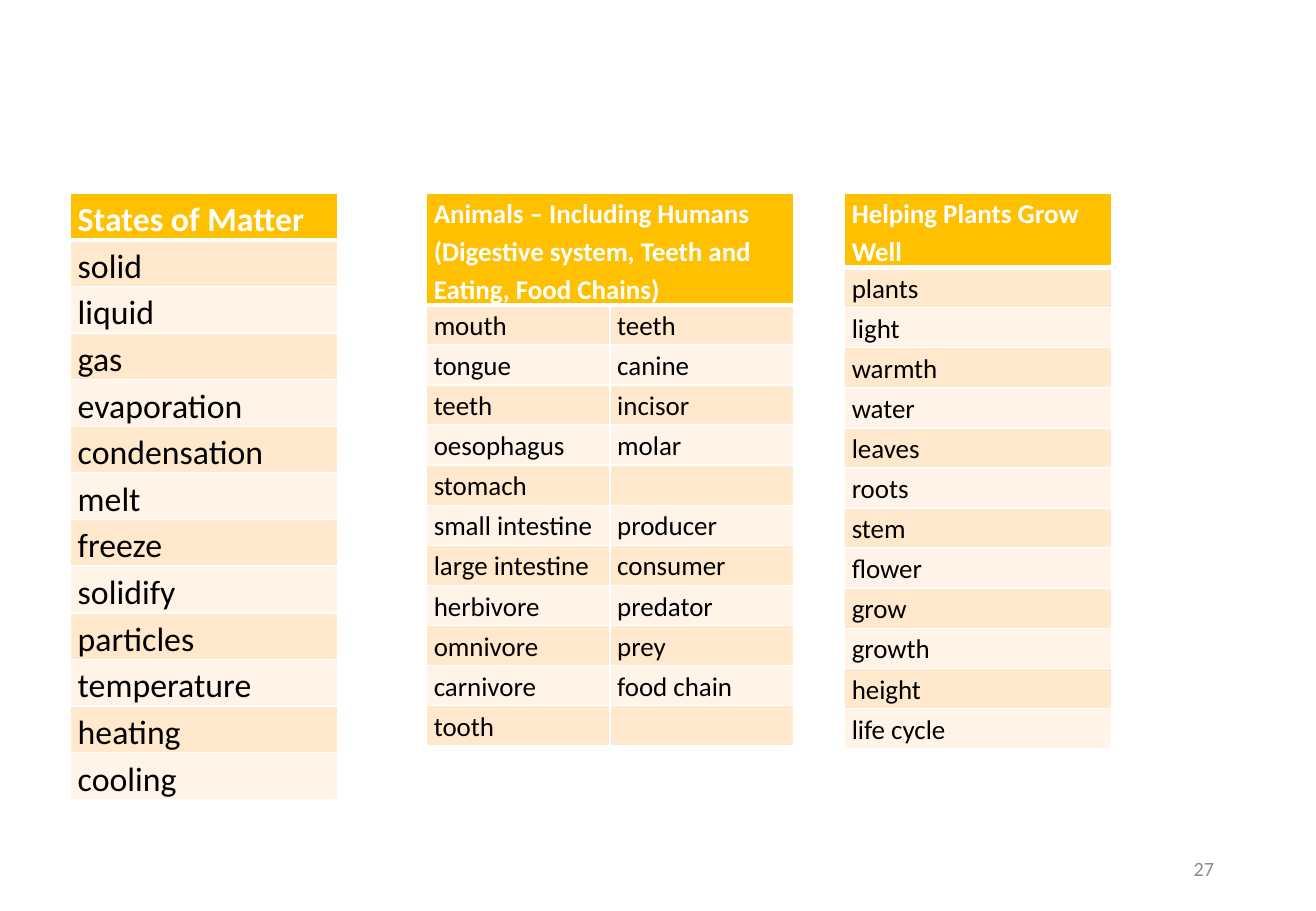
from lxml.etree import SubElement
from pptx import Presentation
from pptx.dml.color import RGBColor
from pptx.enum.text import MSO_ANCHOR, PP_ALIGN
from pptx.oxml.ns import qn
from pptx.util import Inches, Pt

SLIDE_W, SLIDE_H = 10.83, 7.5
TABLE_TOP = 1.59
WHITE, BLACK, GREY = "FFFFFF", "000000", "8C8C8C"
HEADER, BANDS = "FFC000", ("FFE8CC", "FFF4E7")

# heading paragraphs, word columns, left, width, header height, row height, text size
TABLES = [
    (["States of Matter"],
     [["solid", "liquid", "gas", "evaporation", "condensation", "melt", "freeze",
       "solidify", "particles", "temperature", "heating", "cooling"]],
     0.58, 2.2, 0.35, 0.35, 20),
    (["Animals – Including Humans", "(Digestive system, Teeth and Eating, Food Chains)"],
     [["mouth", "tongue", "teeth", "oesophagus", "stomach", "small intestine",
       "large intestine", "herbivore", "omnivore", "carnivore", "tooth"],
      ["teeth", "canine", "incisor", "molar", "", "producer",
       "consumer", "predator", "prey", "food chain", ""]],
     3.51, 3.02, 0.92, 0.33, 16),
    (["Helping Plants Grow Well"],
     [["plants", "light", "warmth", "water", "leaves", "roots", "stem",
       "flower", "grow", "growth", "height", "life cycle"]],
     6.95, 2.2, 0.6, 0.33, 16),
]
PAGE_NUMBER = "27"


def rgb(color):
    return RGBColor.from_string(color)


def add_run(p, text, size, color, bold=False):
    r = p.add_run()
    r.text = text
    r.font.name, r.font.size, r.font.bold = "Calibri", Pt(size), bold
    r.font.color.rgb = rgb(color)


def set_borders(cell, top, bottom):
    """White borders; must come before the fill, as the schema orders them so."""
    tcPr = cell._tc.get_or_add_tcPr()
    for side, width in (("L", 1), ("R", 1), ("T", top), ("B", bottom)):
        ln = SubElement(tcPr, qn(f"a:ln{side}"), w=str(Pt(width)))
        SubElement(SubElement(ln, qn("a:solidFill")), qn("a:srgbClr"), val=WHITE)


def format_cell(cell, paragraphs, size, color, fill, bold=False, top=1, bottom=1):
    set_borders(cell, top, bottom)
    cell.fill.solid()
    cell.fill.fore_color.rgb = rgb(fill)
    cell.margin_left = cell.margin_right = Inches(0.06)
    cell.margin_top = cell.margin_bottom = 0
    tf = cell.text_frame
    for i, text in enumerate(paragraphs):
        p = tf.add_paragraph() if i else tf.paragraphs[0]
        if text:
            p.line_spacing = 1.15
            add_run(p, text, size, color, bold)


def add_word_table(s, heading, columns, left, width, header_h, row_h, size):
    n_rows, n_cols = len(columns[0]) + 1, len(columns)
    height = header_h + row_h * (n_rows - 1)
    table = s.shapes.add_table(n_rows, n_cols, Inches(left), Inches(TABLE_TOP),
                               Inches(width), Inches(height)).table
    for i, row in enumerate(table.rows):
        row.height = Inches(row_h if i else header_h)
    head = table.cell(0, 0)
    if n_cols > 1:
        head.merge(table.cell(0, n_cols - 1))
    format_cell(head, heading, size, WHITE, HEADER, bold=True, bottom=3)
    for c, words in enumerate(columns):
        for i, word in enumerate(words):
            format_cell(table.cell(i + 1, c), [word], size, BLACK, BANDS[i % 2],
                        top=1 if i else 3)


def add_page_number(s):
    box = s.shapes.add_textbox(Inches(7.65), Inches(6.95), Inches(2.44), Inches(0.4))
    tf = box.text_frame
    tf.word_wrap = True
    tf.vertical_anchor = MSO_ANCHOR.MIDDLE
    p = tf.paragraphs[0]
    p.alignment = PP_ALIGN.RIGHT
    add_run(p, PAGE_NUMBER, 12, GREY)


def main():
    prs = Presentation()
    prs.slide_width, prs.slide_height = Inches(SLIDE_W), Inches(SLIDE_H)
    s = prs.slides.add_slide(prs.slide_layouts[6])
    add_page_number(s)
    for word_table in TABLES:
        add_word_table(s, *word_table)
    prs.save("out.pptx")


if __name__ == "__main__":
    main()
